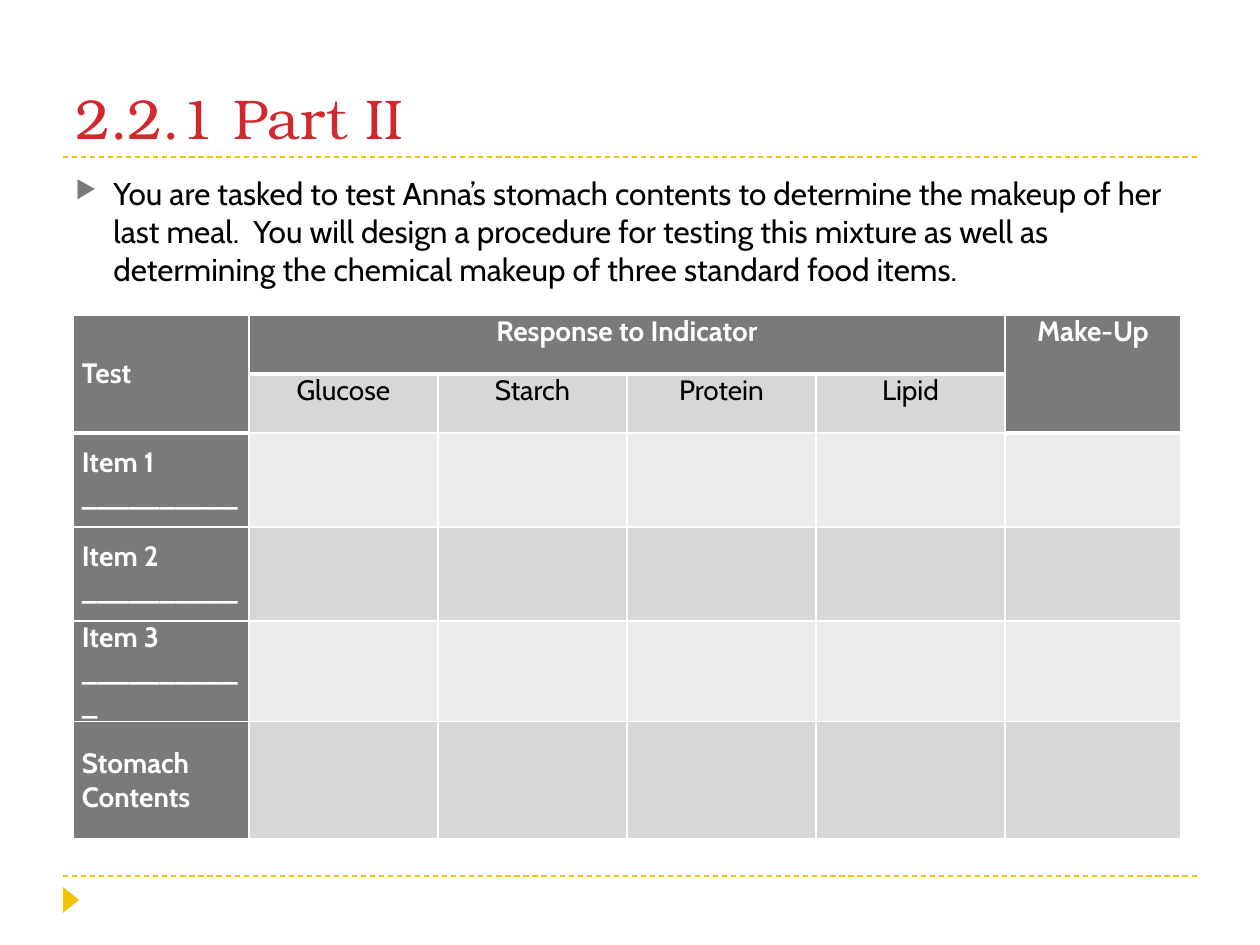
from lxml.etree import SubElement
from pptx import Presentation
from pptx.dml.color import RGBColor
from pptx.enum.dml import MSO_LINE
from pptx.enum.shapes import MSO_CONNECTOR, MSO_SHAPE
from pptx.enum.text import MSO_ANCHOR, PP_ALIGN
from pptx.oxml.ns import qn
from pptx.util import Emu, Pt

EMU_PER_PX = 914400 / 126
COLORS = {
    "gold": "F5C201", "red": "D1282E", "black": "000000", "white": "FFFFFF",
    "header": "7A7A7A", "dark_band": "D7D7D7", "light_band": "ECECEC",
}
HEADING_FONT, BODY_FONT = "TeX Gyre Bonum", "Cabin"

TASK = ("You are tasked to test Anna’s stomach contents to determine the makeup of her "
        "last meal.  You will design a procedure for testing this mixture as well as "
        "determining the chemical makeup of three standard food items.")
INDICATORS = ["Glucose", "Starch", "Protein", "Lipid"]
SAMPLES = ["Item 1 __________", "Item 2 __________", "Item 3 ___________",
           "Stomach Contents"]
COLUMN_WIDTHS = [176, 189, 189, 189, 189, 176]
ROW_HEIGHTS = [59, 59, 94, 94, 94, 117]
LAST_COLUMN = len(COLUMN_WIDTHS) - 1


def px(*lengths):
    return [Emu(round(length * EMU_PER_PX)) for length in lengths]


def rgb(name):
    return RGBColor.from_string(COLORS[name])


def write_text(frame, text, *, size=16, font=BODY_FONT, color="black", bold=False,
               align=PP_ALIGN.LEFT, after=0, bullet=None):
    paragraph = frame.paragraphs[0]
    if bullet:
        add_bullet(paragraph, bullet)
    paragraph.alignment = align
    paragraph.space_after = Pt(after)
    run = paragraph.add_run()
    run.text = text
    run.font.size, run.font.name, run.font.bold = Pt(size), font, bold
    run.font.color.rgb = rgb(color)


def add_bullet(paragraph, mark):
    indent = px(38)[0]
    properties = paragraph._p.get_or_add_pPr()
    properties.set("marL", str(indent))
    properties.set("indent", str(-indent))
    color = SubElement(properties, qn("a:buClr"))
    SubElement(color, qn("a:srgbClr"), val=COLORS["header"])
    SubElement(properties, qn("a:buSzPct"), val="76000")
    SubElement(properties, qn("a:buChar"), char=mark)


def add_text_box(slide, box, text, anchor=MSO_ANCHOR.TOP, **text_format):
    frame = slide.shapes.add_textbox(*px(*box)).text_frame
    frame.word_wrap = True
    frame.vertical_anchor = anchor
    write_text(frame, text, **text_format)


def add_dashed_rule(slide, y):
    rule = slide.shapes.add_connector(MSO_CONNECTOR.STRAIGHT, *px(63, y, 1197, y))
    rule.line.color.rgb = rgb("gold")
    rule.line.width = Pt(0.75)
    rule.line.dash_style = MSO_LINE.DASH
    SubElement(rule._element.spPr, qn("a:effectLst"))


def add_page_marker(slide):
    marker = slide.shapes.add_shape(MSO_SHAPE.ISOSCELES_TRIANGLE, *px(58, 892, 26, 16))
    marker.rotation = 90
    marker.shadow.inherit = False
    marker.fill.solid()
    marker.fill.fore_color.rgb = rgb("gold")
    marker.line.fill.background()


def ends_header(row, column):
    return row == 0 or (row == 1 and column in (0, LAST_COLUMN))


def set_borders(cell, top, bottom):
    properties = cell._tc.get_or_add_tcPr()
    for side, points in (("L", 1), ("R", 1), ("T", top), ("B", bottom)):
        border = SubElement(properties, qn(f"a:ln{side}"), w=str(Pt(points)))
        fill = SubElement(border, qn("a:solidFill"))
        SubElement(fill, qn("a:srgbClr"), val=COLORS["white"])


def style_cell(cell, row, column):
    set_borders(cell, top=3 if ends_header(row - 1, column) and row else 1,
                bottom=3 if ends_header(row, column) else 1)
    if row == 0 or column == 0 or ends_header(row, column):
        fill = "header"
    else:
        fill = "dark_band" if row % 2 else "light_band"
    cell.fill.solid()
    cell.fill.fore_color.rgb = rgb(fill)
    cell.margin_left, cell.margin_right = px(9, 9)
    cell.margin_top = cell.margin_bottom = 0
    cell.vertical_anchor = MSO_ANCHOR.TOP if column else MSO_ANCHOR.MIDDLE


def add_results_table(slide):
    results = slide.shapes.add_table(
        len(ROW_HEIGHTS), len(COLUMN_WIDTHS),
        *px(73, 315, sum(COLUMN_WIDTHS), sum(ROW_HEIGHTS))).table
    results.first_row = results.horz_banding = False
    for column, width in zip(results.columns, px(*COLUMN_WIDTHS)):
        column.width = width
    for row, height in zip(results.rows, px(*ROW_HEIGHTS)):
        row.height = height
    for row in range(len(ROW_HEIGHTS)):
        for column in range(len(COLUMN_WIDTHS)):
            style_cell(results.cell(row, column), row, column)

    # Merged headings
    results.cell(0, 0).merge(results.cell(1, 0))
    results.cell(0, 1).merge(results.cell(0, LAST_COLUMN - 1))
    results.cell(0, LAST_COLUMN).merge(results.cell(1, LAST_COLUMN))

    # Labels by position
    labels = {(0, 0): "Test", (0, 1): "Response to Indicator", (0, LAST_COLUMN): "Make-Up"}
    labels.update({(1, i): name for i, name in enumerate(INDICATORS, 1)})
    labels.update({(i, 0): name for i, name in enumerate(SAMPLES, 2)})
    for (row, column), label in labels.items():
        heading = row == 0 or column == 0
        write_text(results.cell(row, column).text_frame, label, bold=heading, after=6,
                   color="white" if heading else "black",
                   align=PP_ALIGN.CENTER if column else PP_ALIGN.LEFT)


def main():
    presentation = Presentation()
    presentation.slide_width, presentation.slide_height = px(1260, 945)
    slide = presentation.slides.add_slide(presentation.slide_layouts[6])

    # Frame of the page
    for y in (876, 157):
        add_dashed_rule(slide, y)
    add_page_marker(slide)

    # Title, task and results
    add_text_box(slide, (63, 21, 1134, 136), "2.2.1 Part II", MSO_ANCHOR.BOTTOM,
                 size=32, font=HEADING_FONT, color="red")
    add_text_box(slide, (63, 168, 1134, 680), TASK, size=18, bullet="▶")
    add_results_table(slide)

    presentation.save("out.pptx")


if __name__ == "__main__":
    main()
